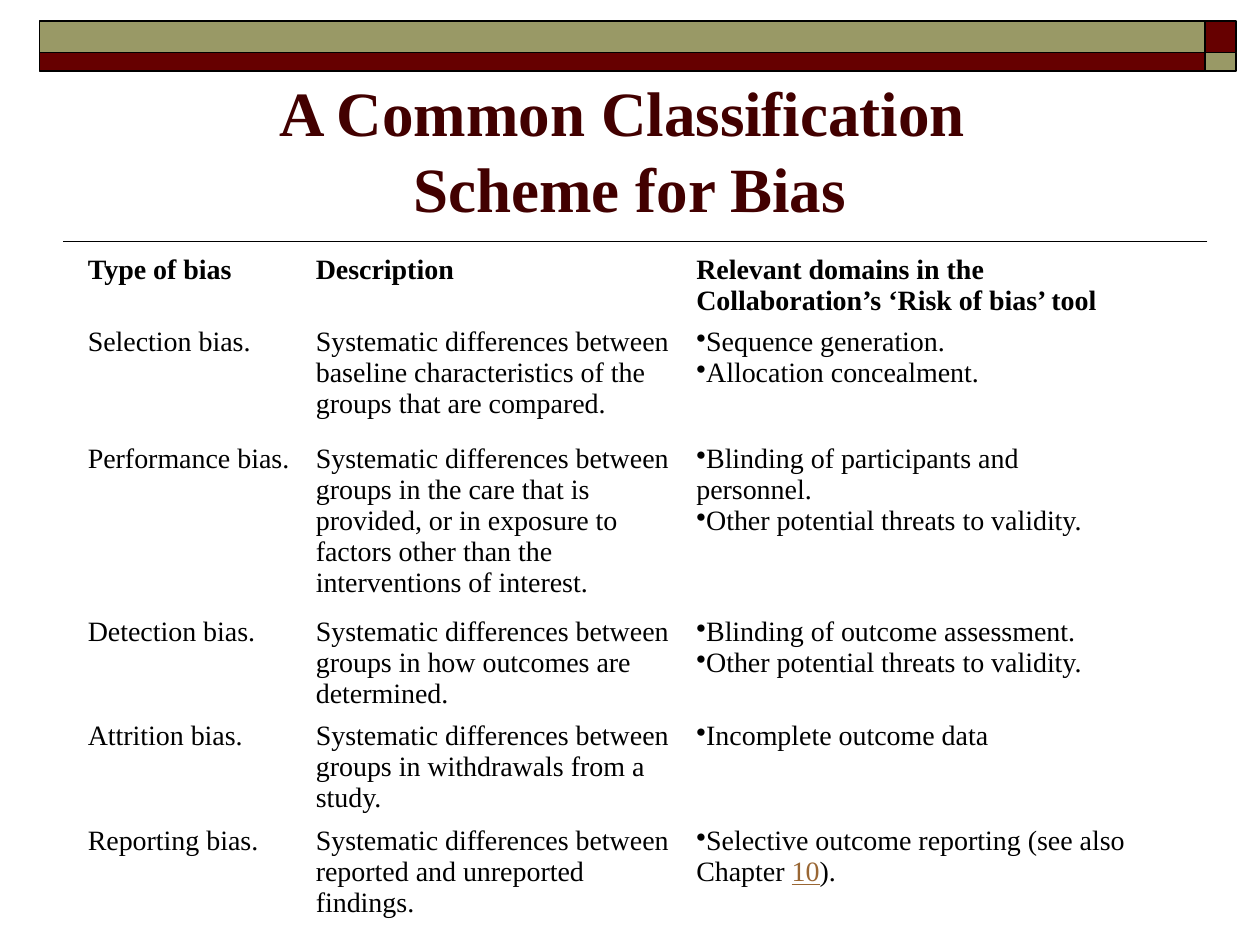
import collections
import pptx
import pptx.util
import pptx.dml.color
import pptx.enum.shapes
import pptx.enum.text
import lxml.etree

COLOURS = {"olive": "999966", "maroon": "660000", "title": "420000",
           "ink": "000000", "reference": "996633"}
FONT = "Times New Roman"
WIDTH = pptx.util.Inches(10)
HEIGHT = pptx.util.Inches(7.5)
COLUMN = WIDTH / 160
ROW = HEIGHT / 90

Box = collections.namedtuple("Box", "left top width height")

HEADINGS = ["Type of bias", "Description",
            "Relevant domains in the Collaboration’s ‘Risk of bias’ tool"]
VALIDITY = "Other potential threats to validity."
BIASES = [
    ("Selection bias.",
     "Systematic differences between baseline characteristics of the groups that are compared.",
     [["Sequence generation."], ["Allocation concealment."]]),
    ("Performance bias.",
     "Systematic differences between groups in the care that is provided, "
     "or in exposure to factors other than the interventions of interest.",
     [["Blinding of participants and personnel."], [VALIDITY]]),
    ("Detection bias.",
     "Systematic differences between groups in how outcomes are determined.",
     [["Blinding of outcome assessment."], [VALIDITY]]),
    ("Attrition bias.",
     "Systematic differences between groups in withdrawals from a study.",
     [["Incomplete outcome data"]]),
    ("Reporting bias.",
     "Systematic differences between reported and unreported findings.",
     [["Selective outcome reporting (see also Chapter ", "10", ")."]]),
]
REFERENCE = "10"
COLUMN_SPANS = [28.96, 48.32, 57.44]
ROW_SPANS = [6.84, 11.16, 16.44, 9.96, 9.96, 9.96]


def grid_box(left, top, width, height):
    return Box(round(left * COLUMN), round(top * ROW),
               round(width * COLUMN), round(height * ROW))


def colour(name):
    return pptx.dml.color.RGBColor.from_string(COLOURS[name])


def format_span(span, size, shade, bold=False):
    span.font.name = FONT
    span.font.size = pptx.util.Pt(size)
    span.font.bold = bold
    span.font.color.rgb = colour(shade)


def add_banner(page, box):
    wide = round(box.width * 148 / 152)
    tall = round(box.height * 3 / 4.8)
    columns = [(0, wide), (wide, box.width - wide)]
    rows = [(0, tall), (tall, box.height - tall)]
    for row, (top, height) in enumerate(rows):
        for column, (left, width) in enumerate(columns):
            tile = page.shapes.add_shape(
                pptx.enum.shapes.MSO_SHAPE.RECTANGLE,
                box.left + left, box.top + top, width, height)
            tile.shadow.inherit = False
            tile.fill.solid()
            tile.fill.fore_color.rgb = colour("olive" if row == column == 0 or row == column == 1
                                              else "maroon")
            tile.line.color.rgb = colour("ink")
            tile.line.width = pptx.util.Pt(1)


def add_rule(page, box):
    rule = page.shapes.add_connector(
        pptx.enum.shapes.MSO_CONNECTOR.STRAIGHT,
        box.left + box.width, box.top, box.left, box.top)
    rule.line.color.rgb = colour("ink")
    rule.line.width = pptx.util.Pt(1)
    lxml.etree.SubElement(rule._element.spPr, pptx.oxml.ns.qn("a:effectLst"))


def add_title(page, box):
    title = page.shapes.title
    title.left, title.top, title.width, title.height = box
    frame = title.text_frame
    frame.text = "A Common Classification \vScheme for Bias"
    frame.word_wrap = True
    frame.auto_size = pptx.enum.text.MSO_AUTO_SIZE.NONE
    frame.vertical_anchor = pptx.enum.text.MSO_ANCHOR.BOTTOM
    para = frame.paragraphs[0]
    para.alignment = pptx.enum.text.PP_ALIGN.CENTER
    for span in para.runs:
        format_span(span, 36, "title", True)


def add_bullet(para):
    properties = para._p.get_or_add_pPr()
    properties.set("marL", "0")
    properties.set("indent", "0")
    bullet = lxml.etree.SubElement(properties, pptx.oxml.ns.qn("a:buChar"))
    bullet.set("char", "•")


def fill_cell(cell, paragraphs, bold, bulleted):
    cell.fill.background()
    cell.margin_left = cell.margin_right = pptx.util.Inches(0.03)
    cell.margin_top = cell.margin_bottom = pptx.util.Inches(0.02)
    frame = cell.text_frame
    for index, pieces in enumerate(paragraphs):
        para = frame.add_paragraph() if index else frame.paragraphs[0]
        if bulleted:
            add_bullet(para)
        for piece in pieces:
            span = para.add_run()
            span.text = piece
            is_reference = piece == REFERENCE
            format_span(span, 16, "reference" if is_reference else "ink", bold)
            if is_reference:
                span.font.underline = True


def add_bias_table(page, box):
    table = page.shapes.add_table(len(ROW_SPANS), len(COLUMN_SPANS), *box).table
    table.first_row = False
    table.horz_banding = False
    for column, share in zip(table.columns, COLUMN_SPANS):
        column.width = round(box.width * share / sum(COLUMN_SPANS))
    for row, share in zip(table.rows, ROW_SPANS):
        row.height = round(box.height * share / sum(ROW_SPANS))
    for column, heading in enumerate(HEADINGS):
        fill_cell(table.cell(0, column), [[heading]], True, False)
    for row, (name, description, domains) in enumerate(BIASES, start=1):
        fill_cell(table.cell(row, 0), [[name]], False, False)
        fill_cell(table.cell(row, 1), [[description]], False, False)
        fill_cell(table.cell(row, 2), domains, False, True)


def main():
    deck = pptx.Presentation()
    deck.slide_width = WIDTH
    deck.slide_height = HEIGHT
    page = deck.slides.add_slide(deck.slide_layouts[5])
    add_rule(page, grid_box(8, 23, 145.33, 0))
    add_banner(page, grid_box(5, 2, 152, 4.8))
    add_title(page, grid_box(8, 7, 144, 15))
    add_bias_table(page, grid_box(10.67, 24, sum(COLUMN_SPANS), sum(ROW_SPANS)))
    deck.save("out.pptx")


if __name__ == "__main__":
    main()
